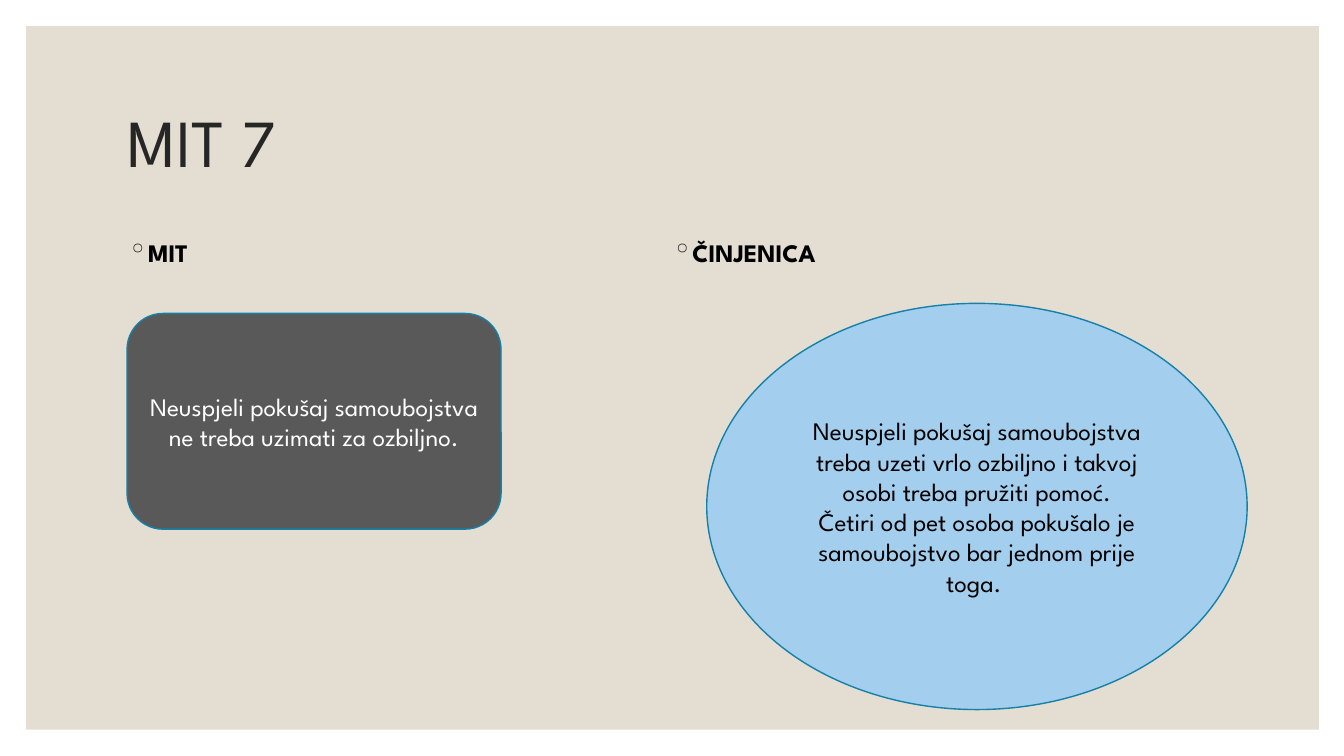
import dataclasses

import pptx
import pptx.dml.color
import pptx.enum.shapes
import pptx.enum.text
import pptx.oxml
import pptx.oxml.ns
import pptx.util
from pptx.util import Inches


@dataclasses.dataclass(frozen=True)
class Theme:
    """Colours, font and type sizes of the deck."""
    panel: str = "E3DED1"
    title: str = "262626"
    dark: str = "595959"
    light: str = "A3CEED"
    outline: str = "1580A9"
    black: str = "000000"
    white: str = "FFFFFF"
    font: str = "League Spartan"
    title_size: int = 48
    body_size: int = 18


THEME = Theme()
SHAPES = pptx.enum.shapes.MSO_SHAPE
ALIGN = pptx.enum.text.PP_ALIGN
MIDDLE = pptx.enum.text.MSO_ANCHOR.MIDDLE


def rgb(code):
    """Turn a hex code into a colour."""
    return pptx.dml.color.RGBColor.from_string(code)


def style(para, size, colour, bold=False):
    """Set the font of a whole paragraph."""
    para.font.name = THEME.font
    para.font.size = pptx.util.Pt(size)
    para.font.color.rgb = rgb(colour)
    para.font.bold = bold


def add_panel(page, box):
    """Draw the plain background panel."""
    panel = page.shapes.add_shape(SHAPES.RECTANGLE, *map(Inches, box))
    panel.shadow.inherit = False
    panel.fill.solid()
    panel.fill.fore_color.rgb = rgb(THEME.panel)
    panel.line.fill.background()


def add_title(page, box, text):
    """Write the slide title, centred vertically in its box."""
    frame = page.shapes.add_textbox(*map(Inches, box)).text_frame
    frame.word_wrap = True
    frame.vertical_anchor = MIDDLE
    para = frame.paragraphs[0]
    para.text = text
    para.line_spacing = 0.9
    style(para, THEME.title_size, THEME.title)


def add_heading(page, box, text):
    """Write a bold column heading with a ring bullet."""
    frame = page.shapes.add_textbox(*map(Inches, box)).text_frame
    frame.word_wrap = True
    para = frame.paragraphs[0]
    para.text = text
    style(para, THEME.body_size, THEME.black, bold=True)
    settings = para._p.get_or_add_pPr()
    settings.set("marL", str(Inches(0.2)))
    settings.set("indent", str(Inches(-0.2)))
    namespace = pptx.oxml.ns.nsdecls("a")
    bullet_parts = (
        f'<a:buClr {namespace}><a:srgbClr val="{THEME.title}"/></a:buClr>',
        f'<a:buChar {namespace} char="◦"/>',
    )
    for position, part in enumerate(bullet_parts):
        settings.insert(position, pptx.oxml.parse_xml(part))


def add_statement(page, box, kind, fill, colour, texts):
    """Draw an outlined shape holding centred paragraphs."""
    shape = page.shapes.add_shape(kind, *map(Inches, box))
    shape.shadow.inherit = False
    shape.fill.solid()
    shape.fill.fore_color.rgb = rgb(fill)
    shape.line.color.rgb = rgb(THEME.outline)
    shape.line.width = pptx.util.Pt(1)
    frame = shape.text_frame
    frame.word_wrap = True
    frame.vertical_anchor = MIDDLE
    frame.text = "\n".join(texts)
    for para in frame.paragraphs:
        para.alignment = ALIGN.CENTER
        style(para, THEME.body_size, colour)


def add_myth_page(deck):
    """Build the slide that sets a myth against the fact."""
    page = deck.slides.add_slide(deck.slide_layouts[6])
    add_panel(page, (0.26, 0.26, 12.82, 6.98))
    add_title(page, (1.17, 0.7, 11, 1.5), "MIT 7")
    for column, heading in enumerate(("MIT", "ČINJENICA")):
        add_heading(page, (1.17 + 5.4 * column, 2.3, 5.4, 0.45), heading)
    add_statement(
        page, (1.26, 3.11, 3.71, 2.14), SHAPES.ROUNDED_RECTANGLE,
        THEME.dark, THEME.white,
        ["Neuspjeli pokušaj samoubojstva ne treba uzimati za ozbiljno."])
    add_statement(
        page, (7.01, 3.01, 5.36, 4.03), SHAPES.OVAL,
        THEME.light, THEME.black,
        ["Neuspjeli pokušaj samoubojstva treba uzeti vrlo ozbiljno "
         "i takvoj osobi treba pružiti pomoć.",
         "Četiri od pet osoba pokušalo je samoubojstvo bar jednom "
         "prije toga. "])


def main():
    """Create and save the deck."""
    deck = pptx.Presentation()
    deck.slide_width = Inches(13.33)
    deck.slide_height = Inches(7.5)
    add_myth_page(deck)
    deck.save("out.pptx")


if __name__ == "__main__":
    main()
